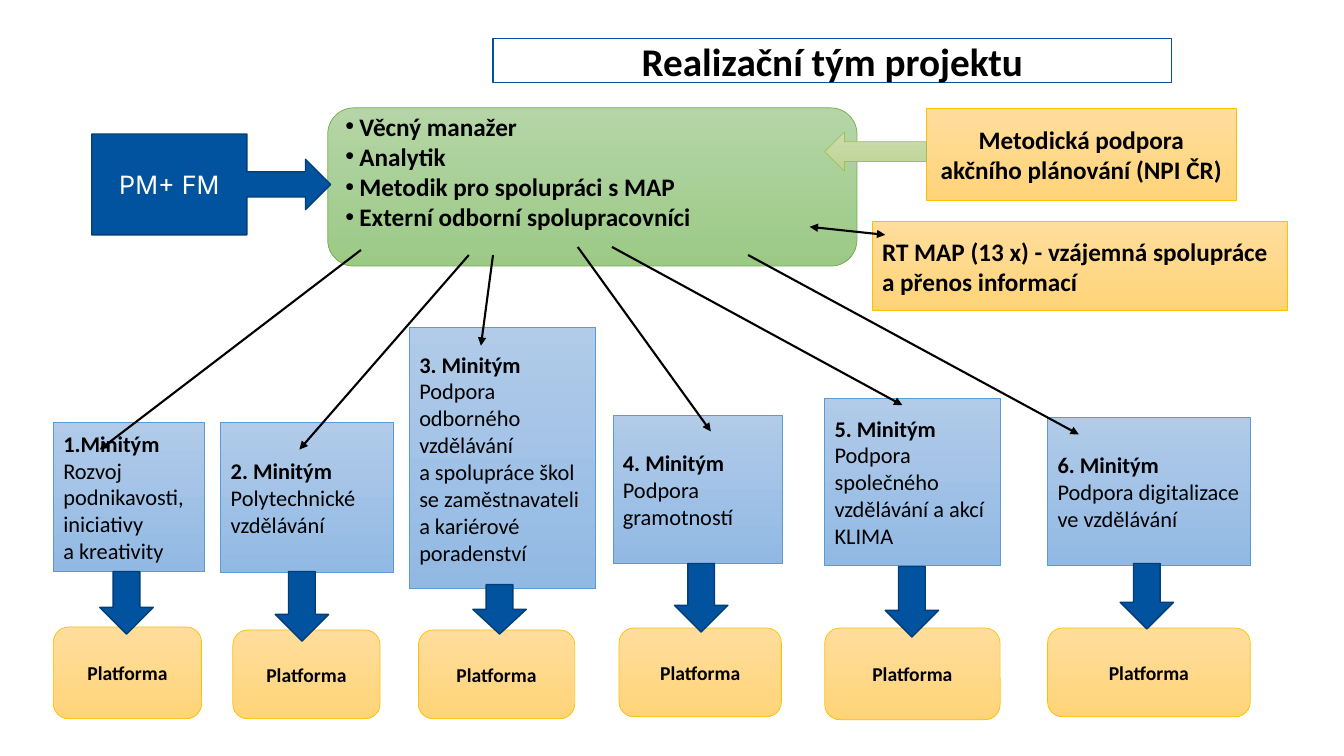
from lxml import etree
from pptx import Presentation
from pptx.dml.color import RGBColor
from pptx.enum.shapes import MSO_CONNECTOR, MSO_SHAPE
from pptx.enum.text import MSO_ANCHOR, PP_ALIGN
from pptx.oxml.ns import qn
from pptx.util import Inches, Pt

RECT, ROUNDED = MSO_SHAPE.RECTANGLE, MSO_SHAPE.ROUNDED_RECTANGLE
DOWN_ARROW, LEFT_ARROW = MSO_SHAPE.DOWN_ARROW, MSO_SHAPE.LEFT_ARROW
CALLOUT = MSO_SHAPE.RIGHT_ARROW_CALLOUT
STRAIGHT = MSO_CONNECTOR.STRAIGHT
LEFT, CENTER = PP_ALIGN.LEFT, PP_ALIGN.CENTER
MIDDLE = MSO_ANCHOR.MIDDLE

# Content: boxes are (left, top, width, height) in inches
TITLE = "Realizační tým projektu"
MANAGERS = "PM+ FM"
CORE_ROLES = [
    "Věcný manažer",
    "Analytik",
    "Metodik pro spolupráci s MAP",
    "Externí odborní spolupracovníci",
]
SUPPORT = "Metodická podpora akčního plánování (NPI ČR)"
MAP_TEAMS = "RT MAP (13 x) - vzájemná spolupráce\na přenos informací"
PLATFORM = "Platforma"
TEAMS = [
    dict(name="1.Minitým", topic="Rozvoj podnikavosti, iniciativy \na kreativity",
         box=(0.53, 4.19, 1.5, 1.48), link=(3.58, 2.48, 0.99, 4.46),
         arrow=(0.99, 5.67, 0.62), platform=(0.53, 6.22, 1.47, 0.91)),
    dict(name="2. Minitým", topic="Polytechnické vzdělávání",
         box=(2.19, 4.19, 1.71, 1.49), link=(4.65, 2.53, 2.97, 4.46),
         arrow=(2.73, 5.67, 0.69), platform=(2.31, 6.25, 1.46, 0.88)),
    dict(name="3. Minitým",
         topic="Podpora odborného vzdělávání \na spolupráce škol se zaměstnavateli "
               "a kariérové poradenství",
         box=(4.06, 3.25, 1.85, 2.59), link=(4.89, 2.53, 4.77, 3.43),
         arrow=(4.69, 5.8, 0.49), platform=(4.15, 6.25, 1.55, 0.88)),
    dict(name="4. Minitým", topic="Podpora gramotností",
         box=(6.08, 4.12, 1.68, 1.47), link=(5.73, 2.45, 7.05, 4.28),
         arrow=(6.69, 5.59, 0.68), platform=(6.14, 6.23, 1.61, 0.88)),
    dict(name="5. Minitým", topic="Podpora společného vzdělávání a akcí KLIMA",
         box=(8.18, 3.95, 1.74, 1.66), link=(6.07, 2.45, 8.95, 4.02),
         arrow=(8.78, 5.62, 0.7), platform=(8.18, 6.23, 1.74, 0.91)),
    dict(name="6. Minitým", topic="Podpora digitalizace ve vzdělávání",
         box=(10.39, 4.14, 2.01, 1.47), link=(7.42, 2.53, 10.7, 4.31),
         arrow=(11.11, 5.59, 0.65), platform=(10.39, 6.23, 2.01, 0.88)),
]
MAP_LINK = (8.03, 2.25, 8.78, 2.33)
ARROW_WIDTH = 0.53
BULLET_INDENT = 0.14

# Each style: fill colours (two make a gradient), line colour, line width
THEME = {
    "green": (("B5D5A7", "9CCA86"), "70AD47", 0.5),
    "yellow": (("FFDD9C", "FFD479"), "FFC000", 0.5),
    "blue": (("B1CBE9", "92B9E4"), "5B9BD5", 0.5),
    "lime": (("CCDDB0", "BCD392"), "9FBF5B", 0.5),
    "navy": (("02539F",), "013D76", 1),
    "white": (("FFFFFF",), "02539F", 1),
    "text": "000000",
    "inverse": "FFFFFF",
    "font": "Calibri",
    "manager_font": "Inter",
    "title_size": 28,
    "body_size": 18,
    "team_size": 16,
    "platform_size": 14,
}


def rgb(code):
    return RGBColor.from_string(code)


def add_block(slide, kind, box, style):
    block = slide.shapes.add_shape(kind, *map(Inches, box))
    block.shadow.inherit = False
    fills, line_color, line_width = THEME[style]
    if len(fills) == 1:
        block.fill.solid()
        block.fill.fore_color.rgb = rgb(fills[0])
    else:
        block.fill.gradient()
        block.fill.gradient_angle = 270
        for stop, code in zip(block.fill.gradient_stops, fills):
            stop.color.rgb = rgb(code)
    block.line.color.rgb = rgb(line_color)
    block.line.width = Pt(line_width)
    return block


def add_bullet(paragraph):
    properties = paragraph._p.get_or_add_pPr()
    indent = Inches(BULLET_INDENT)
    properties.set("marL", str(indent))
    properties.set("indent", str(-indent))
    etree.SubElement(properties, qn("a:buFont")).set("typeface", "Arial")
    etree.SubElement(properties, qn("a:buChar")).set("char", "•")


def write(block, paragraphs, size, align=CENTER, color="text", font="font", bulleted=False):
    """Fill a block with (text, bold) paragraphs; a newline is a line break."""
    frame = block.text_frame
    frame.word_wrap = True
    frame.vertical_anchor = MIDDLE
    for number, (text, bold) in enumerate(paragraphs):
        paragraph = frame.add_paragraph() if number else frame.paragraphs[0]
        paragraph.alignment = align
        if bulleted:
            add_bullet(paragraph)
        for row, words in enumerate(text.split("\n")):
            if row:
                paragraph.add_line_break()
            run = paragraph.add_run()
            run.text = words
            run.font.name = THEME[font]
            run.font.size = Pt(THEME[size])
            run.font.bold = bold
            run.font.color.rgb = rgb(THEME[color])


def add_link(slide, ends, both_ways=False):
    link = slide.shapes.add_connector(STRAIGHT, *map(Inches, ends))
    link.line.color.rgb = rgb(THEME["text"])
    link.line.width = Pt(1.5)
    line = link.line._get_or_add_ln()
    for tag in ("a:headEnd", "a:tailEnd") if both_ways else ("a:tailEnd",):
        etree.SubElement(line, qn(tag)).set("type", "triangle")
    etree.SubElement(link._element.spPr, qn("a:effectLst"))


def main():
    deck = Presentation()
    deck.slide_width, deck.slide_height = Inches(13.33), Inches(7.5)
    slide = deck.slides.add_slide(deck.slide_layouts[6])

    core = add_block(slide, ROUNDED, (3.25, 1.07, 5.25, 1.57), "green")
    write(core, [(role, True) for role in CORE_ROLES], "body_size", LEFT, bulleted=True)
    core.text_frame.margin_top, core.text_frame.margin_bottom = 0, Inches(0.31)

    map_teams = add_block(slide, RECT, (8.65, 2.2, 4.12, 0.88), "yellow")
    write(map_teams, [(MAP_TEAMS, True)], "body_size", LEFT)

    for team in TEAMS:
        card = add_block(slide, RECT, team["box"], "blue")
        write(card, [(team["name"], True), (team["topic"], False)], "team_size", LEFT)

    add_link(slide, MAP_LINK, both_ways=True)
    for team in TEAMS:
        add_link(slide, team["link"])
        platform = add_block(slide, ROUNDED, team["platform"], "yellow")
        write(platform, [(PLATFORM, True)], "platform_size")
        left, top, height = team["arrow"]
        add_block(slide, DOWN_ARROW, (left, top, ARROW_WIDTH, height), "navy")

    support = add_block(slide, RECT, (9.19, 1.07, 3.07, 0.92), "yellow")
    write(support, [(SUPPORT, True)], "body_size")
    add_block(slide, LEFT_ARROW, (8.18, 1.31, 1.01, 0.39), "lime")

    title = add_block(slide, RECT, (4.89, 0.38, 6.73, 0.44), "white")
    write(title, [(TITLE, True)], "title_size")
    managers = add_block(slide, CALLOUT, (0.91, 1.33, 2.37, 1), "navy")
    write(managers, [(MANAGERS, False)], "body_size", color="inverse", font="manager_font")

    deck.save("out.pptx")


if __name__ == "__main__":
    main()
